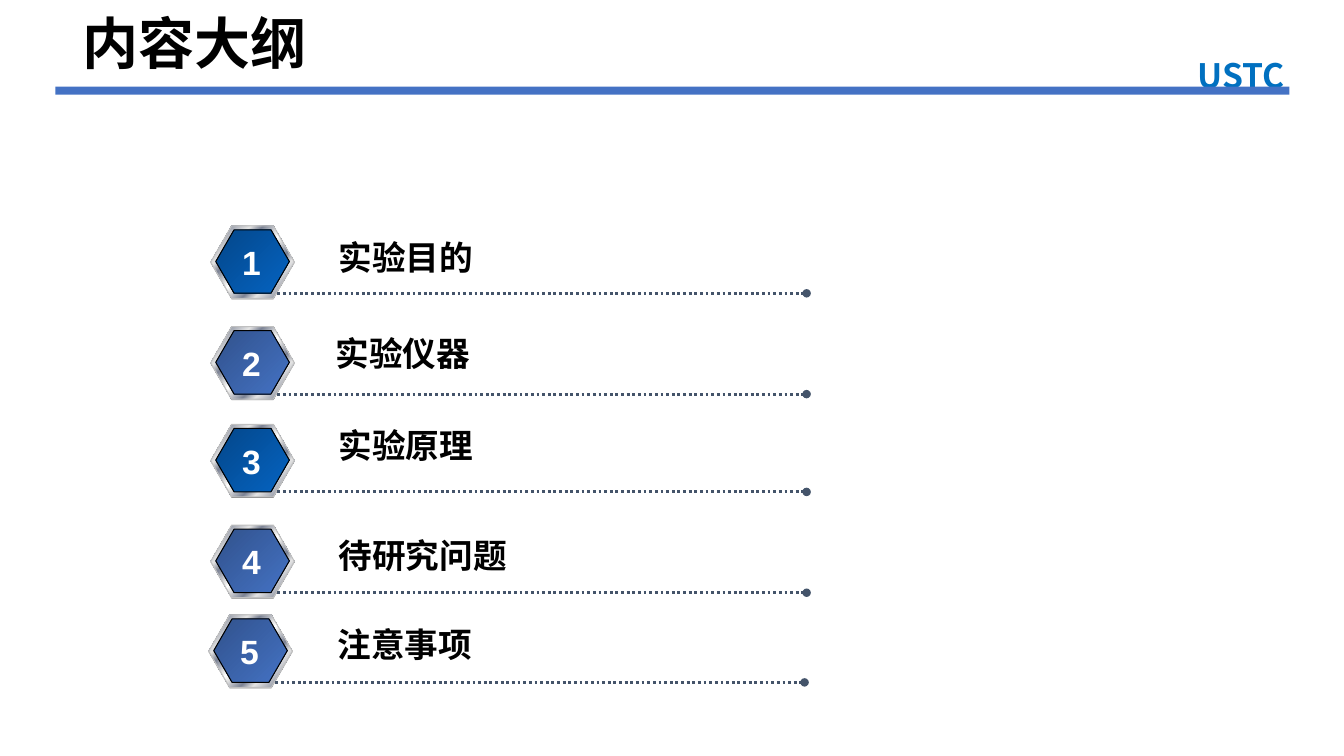
from lxml import etree
from pptx import Presentation
from pptx.dml.color import RGBColor
from pptx.enum.dml import MSO_LINE
from pptx.enum.shapes import MSO_CONNECTOR, MSO_SHAPE
from pptx.enum.text import MSO_ANCHOR, MSO_AUTO_SIZE, PP_ALIGN
from pptx.oxml.ns import qn
from pptx.util import Inches, Pt

BLACK = RGBColor(0x00, 0x00, 0x00)
WHITE = RGBColor(0xFF, 0xFF, 0xFF)
BAR_BLUE = RGBColor(0x44, 0x72, 0xC4)
SCHOOL_BLUE = RGBColor(0x00, 0x70, 0xC0)
SHADE_GRAY = RGBColor(0x80, 0x80, 0x80)
RIM_GRAY = RGBColor(0xC0, 0xC0, 0xC0)
RULE_SLATE = RGBColor(0x44, 0x54, 0x6A)
SILVER = RGBColor(0xE6, 0xE6, 0xE6)
STEEL = RGBColor(0x7D, 0x84, 0x96)

BRIGHT = [(0, RGBColor(0x04, 0x47, 0x8A)), (100, RGBColor(0x05, 0x63, 0xC1))]
SOFT = [(0, RGBColor(0x31, 0x52, 0x8C)), (100, BAR_BLUE)]
METAL = [(0, SILVER), (8, STEEL), (26, SILVER), (34, STEEL), (46, SILVER), (50, WHITE),
         (54, SILVER), (66, STEEL), (74, SILVER), (92, STEEL), (100, SILVER)]

CJK_FONT = "Noto Sans CJK SC"
TITLE = "内容大纲"
SCHOOL = "USTC"
# label, label font, label left, label top, badge left, badge top, badge colours
TOPICS = [
    ("实验目的", "Arial", 3.26, 2.29, 2.09, 2.24, BRIGHT),
    ("实验仪器", CJK_FONT, 3.23, 3.25, 2.09, 3.24, SOFT),
    ("实验原理", CJK_FONT, 3.26, 4.16, 2.09, 4.21, BRIGHT),
    ("待研究问题", CJK_FONT, 3.26, 5.25, 2.09, 5.21, SOFT),
    ("注意事项", CJK_FONT, 3.25, 6.13, 2.07, 6.10, SOFT),
]


def write_text(shape, text, color, size=24, font_name=CJK_FONT, align=PP_ALIGN.LEFT):
    frame = shape.text_frame
    frame_format = {"word_wrap": True, "auto_size": MSO_AUTO_SIZE.NONE,
                    "vertical_anchor": MSO_ANCHOR.MIDDLE}
    for name, value in frame_format.items():
        setattr(frame, name, value)
    paragraph = frame.paragraphs[0]
    paragraph.alignment = align
    run = paragraph.add_run()
    run.text = text
    for name, value in {"size": Pt(size), "bold": True, "name": font_name}.items():
        setattr(run.font, name, value)
    run.font.color.rgb = color
    east_asian = etree.Element(qn("a:ea"), typeface=CJK_FONT)
    run.font._element.find(qn("a:latin")).addnext(east_asian)


def add_text(slide, box, text, color, **text_format):
    write_text(slide.shapes.add_textbox(*map(Inches, box)), text, color, **text_format)


def add_filled(slide, kind, box, fill, line=None):
    """Add a preset shape; fill is a colour or a list of gradient stops."""
    shape = slide.shapes.add_shape(kind, *map(Inches, box))
    shape.shadow.inherit = False
    if isinstance(fill, list):
        gradient = etree.Element(qn("a:gradFill"), rotWithShape="1")
        stops = etree.SubElement(gradient, qn("a:gsLst"))
        for position, color in fill:
            stop = etree.SubElement(stops, qn("a:gs"), pos=str(position * 1000))
            etree.SubElement(stop, qn("a:srgbClr"), val=str(color))
        etree.SubElement(gradient, qn("a:lin"), ang=str(45 * 60000), scaled="0")
        shape._element.spPr.find(qn("a:prstGeom")).addnext(gradient)
    else:
        shape.fill.solid()
        shape.fill.fore_color.rgb = fill
    if line is None:
        shape.line.fill.background()
    else:
        shape.line.color.rgb = line
        shape.line.width = Pt(0.75)
    return shape


def add_badge(slide, left, top, colors):
    layers = [
        ((left, top + 0.01, 0.83, 0.72), SHADE_GRAY, None),
        ((left, top, 0.83, 0.72), METAL, RIM_GRAY),
        ((left + 0.05, top + 0.04, 0.73, 0.63), colors, BLACK),
    ]
    for box, fill, line in layers:
        add_filled(slide, MSO_SHAPE.HEXAGON, box, fill, line).adjustments[0] = 0.289


def add_dotted_rule(slide, left, top, width):
    rule = slide.shapes.add_connector(
        MSO_CONNECTOR.STRAIGHT, *map(Inches, (left, top, left + width, top)))
    rule.line.color.rgb = RULE_SLATE
    rule.line.width = Pt(2)
    rule.line.dash_style = MSO_LINE.ROUND_DOT
    etree.SubElement(rule.line._get_or_add_ln(), qn("a:tailEnd"), type="oval")
    etree.SubElement(rule._element.spPr, qn("a:effectLst"))


def main():
    presentation = Presentation()
    presentation.slide_width = Inches(13.33)
    presentation.slide_height = Inches(7.5)
    slide = presentation.slides.add_slide(presentation.slide_layouts[5])

    add_text(slide, (11.29, 0.49, 2.04, 0.5), SCHOOL, SCHOOL_BLUE, align=PP_ALIGN.CENTER)
    add_filled(slide, MSO_SHAPE.RECTANGLE, (0.55, 0.86, 12.24, 0.08), BAR_BLUE)

    title = slide.shapes.title
    title_box = {"left": 0.72, "top": 0.03, "width": 2.6, "height": 0.77}
    for name, value in title_box.items():
        setattr(title, name, Inches(value))
    write_text(title, TITLE, BLACK, size=40)

    for number, topic in enumerate(TOPICS, start=1):
        label, font_name, label_left, label_top, left, top, colors = topic
        add_badge(slide, left, top, colors)
        add_dotted_rule(slide, left + 0.66, top + 0.67, 5.25)
        add_text(slide, (label_left, label_top, 1.95, 0.51), label, BLACK, font_name=font_name)
        add_text(slide, (left + 0.21, top + 0.11, 0.39, 0.5), str(number), WHITE,
                 font_name="Arial", align=PP_ALIGN.CENTER)

    presentation.save("out.pptx")


if __name__ == "__main__":
    main()
